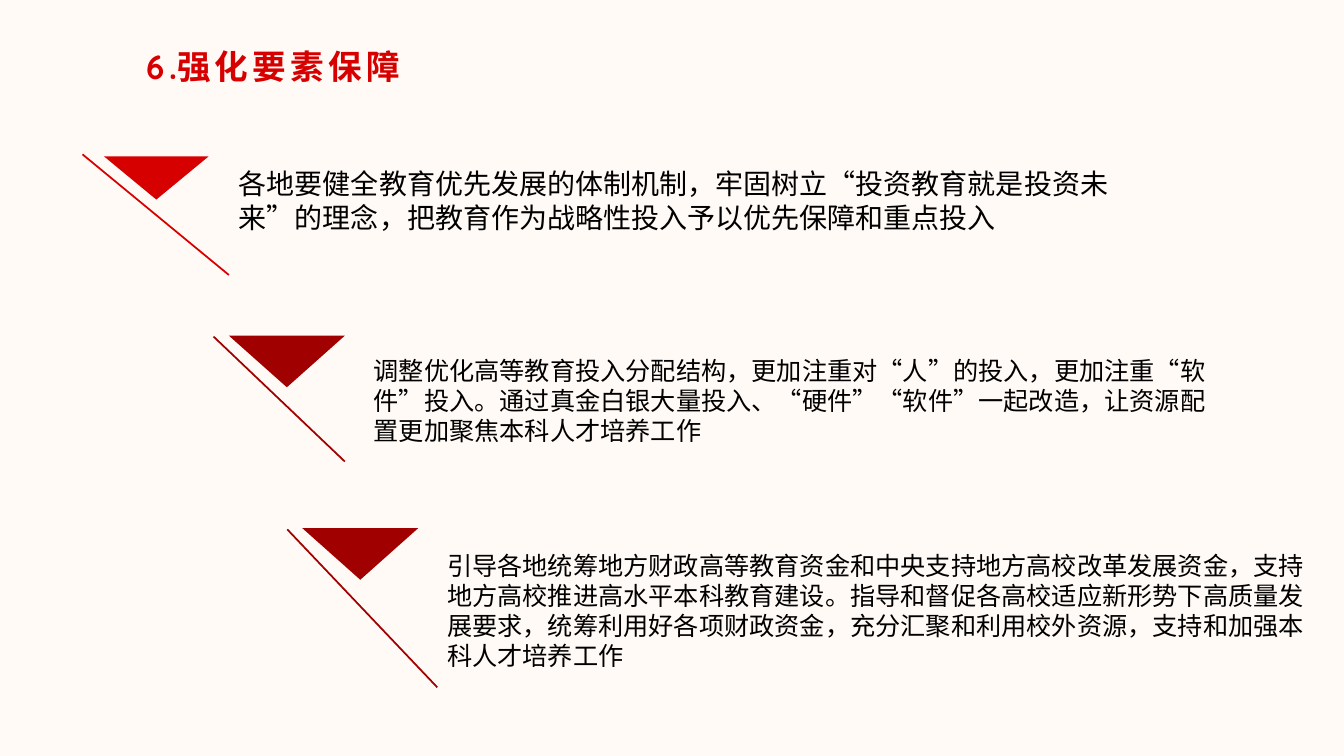
from dataclasses import dataclass

from lxml import etree
from pptx import Presentation
from pptx.dml.color import RGBColor
from pptx.enum.shapes import MSO_CONNECTOR
from pptx.enum.text import MSO_ANCHOR, PP_ALIGN
from pptx.oxml.ns import qn
from pptx.util import Cm, Pt

STRAIGHT = MSO_CONNECTOR.STRAIGHT
TOP, MIDDLE = MSO_ANCHOR.TOP, MSO_ANCHOR.MIDDLE
LEFT = PP_ALIGN.LEFT


@dataclass(frozen=True)
class Theme:
    background: RGBColor = RGBColor(0xFF, 0xFA, 0xF5)
    red: RGBColor = RGBColor(0xD7, 0x00, 0x00)
    dark_red: RGBColor = RGBColor(0xA1, 0x00, 0x00)
    black: RGBColor = RGBColor(0, 0, 0)
    digit_font: str = "Quicksand"
    font: str = "Noto Sans CJK SC"
    title_size: int = 24
    lead_size: int = 20
    body_size: int = 18
    leading: float = 1.19
    line_width: float = 1.25


THEME = Theme()

# Content: title runs are (text, font, letter spacing in 1/100 pt)
TITLE = [
    ("6", THEME.digit_font, 300),
    (".", THEME.digit_font, 0),
    ("强化要素保障", THEME.font, 300),
]
# Lengths in cm: line = x1, y1, x2, y2; triangle and box = left, top, width, height
STEPS = [
    dict(text="各地要健全教育优先发展的体制机制，牢固树立“投资教育就是投资未来”的理念，"
              "把教育作为战略性投入予以优先保障和重点投入",
         size=THEME.lead_size, color=THEME.red,
         line=(2.08, 3.89, 5.77, 6.93), triangle=(2.62, 3.94, 2.64, 1.09),
         box=(5.77, 4.01, 24.05, 1.96)),
    dict(text="调整优化高等教育投入分配结构，更加注重对“人”的投入，更加注重“软件”投入。"
              "通过真金白银大量投入、“硬件”“软件”一起改造，让资源配置更加聚焦本科人才培养工作",
         size=THEME.body_size, color=THEME.dark_red,
         line=(5.38, 8.48, 8.69, 11.63), triangle=(5.77, 8.46, 2.92, 1.3),
         box=(9.17, 8.76, 22, 2.57)),
    dict(text="引导各地统筹地方财政高等教育资金和中央支持地方高校改革发展资金，"
              "支持地方高校推进高水平本科教育建设。指导和督促各高校适应新形势下高质量发展要求，"
              "统筹利用好各项财政资金，充分汇聚和利用校外资源，支持和加强本科人才培养工作",
         size=THEME.body_size, color=THEME.dark_red,
         line=(7.24, 13.34, 11.02, 17.32), triangle=(7.62, 13.31, 2.92, 1.3),
         box=(11.02, 13.67, 22.4, 3.33)),
]


def set_font_name(font, props, name):
    """Use one typeface for Latin and East Asian text."""
    font.name = name
    etree.SubElement(props, qn("a:ea")).set("typeface", name)


def add_title(s):
    sp = s.shapes.title
    sp.left, sp.top, sp.width, sp.height = Cm(3.43), Cm(1.04), Cm(23.83), Cm(1.27)
    tf = sp.text_frame
    tf.vertical_anchor = MIDDLE
    p = tf.paragraphs[0]
    p.alignment = LEFT
    p.space_before = Pt(0)
    for text, name, spacing in TITLE:
        r = p.add_run()
        r.text = text
        r.font.size = Pt(THEME.title_size)
        r.font.bold = True
        r.font.color.rgb = THEME.red
        props = r.font._element
        props.set("spc", str(spacing))
        set_font_name(r.font, props, name)


def add_marker(s, line, triangle, color):
    group = s.shapes.add_group_shape()
    # Slanted line
    cx = group.shapes.add_connector(STRAIGHT, *map(Cm, line))
    cx.line.color.rgb = color
    cx.line.width = Pt(THEME.line_width)
    etree.SubElement(cx._element.spPr, qn("a:effectLst"))
    # Triangle pointing down
    left, top, width, height = map(Cm, triangle)
    fb = group.shapes.build_freeform(left, top)
    fb.add_line_segments([(left + width, top), (left + width // 2, top + height)])
    sp = fb.convert_to_shape()
    sp.shadow.inherit = False
    sp.fill.solid()
    sp.fill.fore_color.rgb = color
    sp.line.fill.background()


def add_body(s, text, size, box):
    tf = s.shapes.add_textbox(*map(Cm, box)).text_frame
    tf.word_wrap = True
    tf.vertical_anchor = TOP
    tf.margin_top = Cm(0.2)
    p = tf.paragraphs[0]
    p.text = text
    p.line_spacing = Pt(size * THEME.leading)
    p.font.size = Pt(size)
    p.font.color.rgb = THEME.black
    set_font_name(p.font, p.font._element, THEME.font)


def main():
    prs = Presentation()
    prs.slide_width, prs.slide_height = Cm(33.87), Cm(19.05)
    s = prs.slides.add_slide(prs.slide_layouts[5])
    s.background.fill.solid()
    s.background.fill.fore_color.rgb = THEME.background

    add_title(s)
    for step in STEPS:
        add_marker(s, step["line"], step["triangle"], step["color"])
        add_body(s, step["text"], step["size"], step["box"])

    prs.save("out.pptx")


if __name__ == "__main__":
    main()
